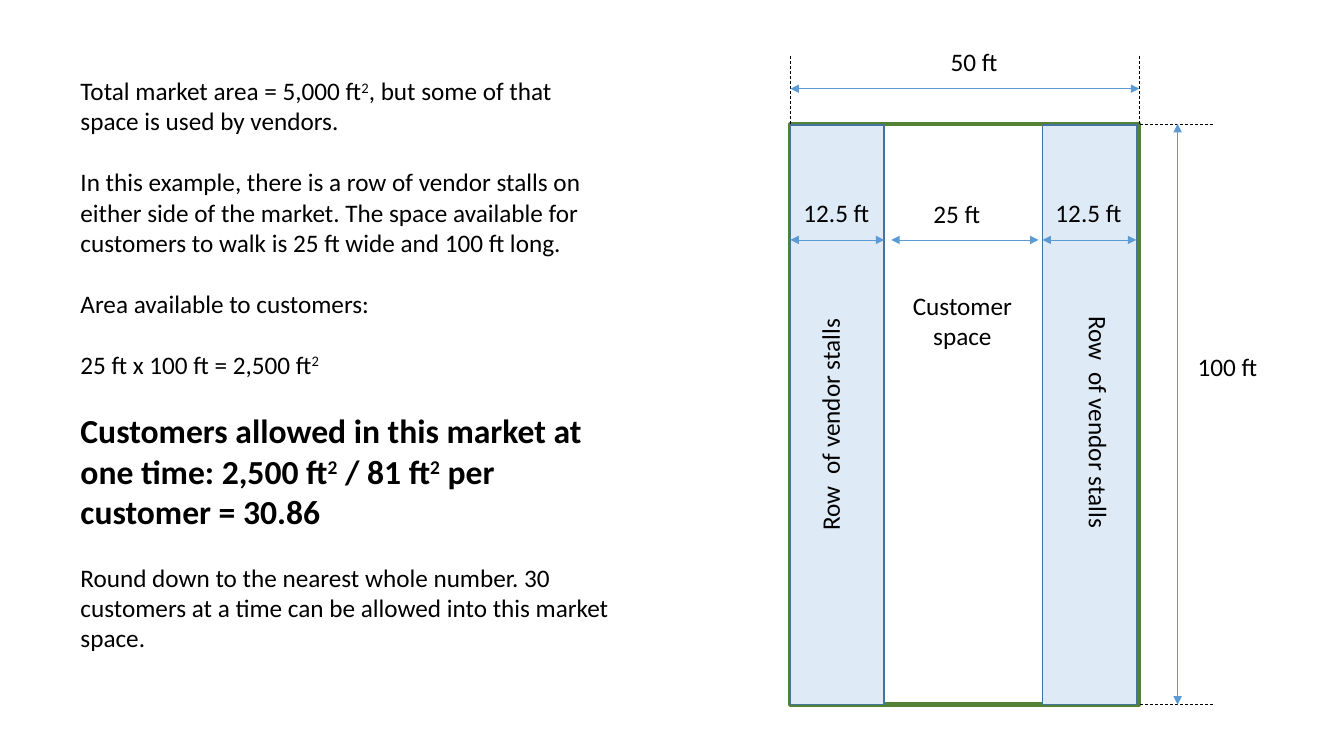
from lxml import etree
from pptx import Presentation
from pptx.dml.color import RGBColor
from pptx.enum.dml import MSO_LINE
from pptx.enum.shapes import MSO_CONNECTOR, MSO_SHAPE
from pptx.enum.text import MSO_AUTO_SIZE, PP_ALIGN
from pptx.oxml.ns import qn
from pptx.util import Pt

RECTANGLE = MSO_SHAPE.RECTANGLE
STRAIGHT = MSO_CONNECTOR.STRAIGHT
DASH = MSO_LINE.DASH
FIT_SHAPE = MSO_AUTO_SIZE.SHAPE_TO_FIT_TEXT
LEFT, CENTER = PP_ALIGN.LEFT, PP_ALIGN.CENTER

EMU_PER_PX = 9144  # 100 px to the inch
FONT = "Calibri"
BLACK = RGBColor(0x00, 0x00, 0x00)
GREEN = RGBColor(0x54, 0x82, 0x35)
ARROW_BLUE = RGBColor(0x5B, 0x9B, 0xD5)
STALL_FILL = RGBColor(0xDE, 0xEB, 0xF7)
STALL_LINE = RGBColor(0x43, 0x73, 0x9E)

# Text, bold
EXPLANATION = [
    ("Total market area = 5,000 ft², but some of that space is used by vendors.", False),
    ("In this example, there is a row of vendor stalls on either side of the market. "
     "The space available for customers to walk is 25 ft wide and 100 ft long.", False),
    ("Area available to customers:", False),
    ("25 ft x 100 ft = 2,500 ft²", False),
    ("Customers allowed in this market at one time: "
     "2,500 ft² / 81 ft² per customer = 30.86", True),
    ("Round down to the nearest whole number. 30 customers at a time "
     "can be allowed into this market space.", False),
]


def px(*lengths):
    return [length * EMU_PER_PX for length in lengths]


def write_text(paragraph, text, size=18, bold=False, align=LEFT, gap=0):
    """Write one paragraph; each ² becomes a superscript 2."""
    paragraph.alignment = align
    paragraph.space_before = Pt(gap)
    for index, piece in enumerate(text.split("²")):
        for content, raised in (("2", True), (piece, False)):
            if not content or (raised and index == 0):
                continue
            run = paragraph.add_run()
            run.text = content
            run.font.name = FONT
            run.font.size = Pt(size)
            run.font.bold = bold
            run.font.color.rgb = BLACK
            if raised:
                run.font._element.set("baseline", "30000")


def add_text_box(slide, left, top, width, height, direction=None):
    frame = slide.shapes.add_textbox(*px(left, top, width, height)).text_frame
    frame.word_wrap = True
    frame.auto_size = FIT_SHAPE
    if direction:
        frame._txBody.bodyPr.set("vert", direction)
    return frame


def add_label(slide, text, *box, direction=None, **text_format):
    frame = add_text_box(slide, *box, direction=direction)
    write_text(frame.paragraphs[0], text, **text_format)


def add_rectangle(slide, box, line_color, line_width, fill=None):
    shape = slide.shapes.add_shape(RECTANGLE, *px(*box))
    shape.shadow.inherit = False
    if fill is None:
        shape.fill.background()
    else:
        shape.fill.solid()
        shape.fill.fore_color.rgb = fill
    shape.line.color.rgb = line_color
    shape.line.width = Pt(line_width)


def add_line(slide, *ends, color=BLACK):
    connector = slide.shapes.add_connector(STRAIGHT, *px(*ends))
    connector.line.color.rgb = color
    connector.line.width = Pt(0.5)
    etree.SubElement(connector._element.spPr, qn("a:effectLst"))
    return connector


def add_guide(slide, *ends):
    add_line(slide, *ends).line.dash_style = DASH


def add_dimension(slide, *ends):
    line = add_line(slide, *ends, color=ARROW_BLUE).line._get_or_add_ln()
    for end in ("a:headEnd", "a:tailEnd"):
        etree.SubElement(line, qn(end), type="triangle")


def add_explanation(slide, left, top, width, height):
    frame = add_text_box(slide, left, top, width, height)
    for index, (text, bold) in enumerate(EXPLANATION):
        paragraph = frame.add_paragraph() if index else frame.paragraphs[0]
        write_text(paragraph, text, size=24 if bold else 18, bold=bold,
                   gap=22 if index else 0)


def add_market_plan(slide, left, top, width, height):
    right, bottom = left + width, top + height
    add_rectangle(slide, (left, top, width, height), GREEN, 3)

    # Overall width, above the market
    for x in (left, right):
        add_guide(slide, x, top - 67, x, top)
    add_dimension(slide, left, top - 35, right, top - 35)
    add_label(slide, "50 ft", left + 149, top - 82, 86, 40)

    # Overall length, right of the market
    for y in (top, bottom):
        add_guide(slide, right + 73, y, right, y)
    add_dimension(slide, right + 38, top, right + 38, bottom)
    add_label(slide, "100 ft", right + 48, top + 221, 81, 40)

    # Vendor stalls on either side
    arrow_y = top + 115
    stall_width = 93
    right_stall = left + 250
    for stall, name_left, name_top, direction in (
            (left, left + 19, top + 164, "vert270"),
            (right_stall, right_stall + 26, top + 181, "vert")):
        add_rectangle(slide, (stall, top + 1, stall_width, height - 1),
                      STALL_LINE, 1, STALL_FILL)
        add_label(slide, "Row  of vendor stalls", name_left, name_top, 50, 249,
                  direction=direction)
        add_dimension(slide, stall, arrow_y, stall + stall_width, arrow_y)
        add_label(slide, "12.5 ft", stall + 3, top + 68, 102, 40)

    # Customer space between the stalls
    add_dimension(slide, left + 100, arrow_y, right_stall - 4, arrow_y)
    add_label(slide, "25 ft", left + 132, top + 69, 98, 40)
    add_label(slide, "Customer space", left + 111, top + 160, 119, 71, align=CENTER)


def main():
    presentation = Presentation()
    presentation.slide_width, presentation.slide_height = px(1333, 750)
    slide = presentation.slides.add_slide(presentation.slide_layouts[6])
    add_explanation(slide, 70, 70, 544, 586)
    add_market_plan(slide, 784, 123, 346, 576)
    presentation.save("out.pptx")


if __name__ == "__main__":
    main()
